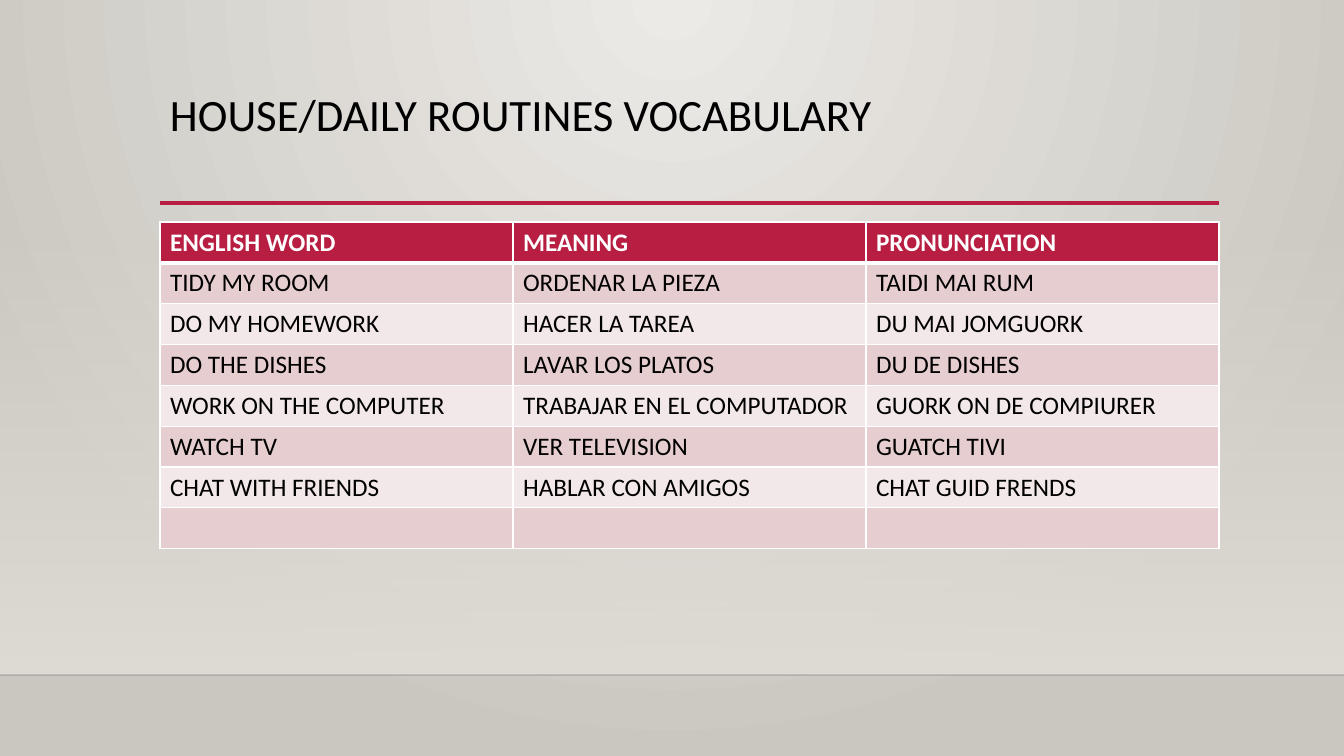
import pptx
import pptx.dml.color
import pptx.enum.shapes
import pptx.enum.text
import pptx.oxml
import pptx.oxml.ns
import pptx.util
from lxml import etree

RGBColor = pptx.dml.color.RGBColor
qn = pptx.oxml.ns.qn

EMU_PER_PX = 914400 / 100.8
FONT = "Calibri"
BLACK = RGBColor(0x00, 0x00, 0x00)
WHITE = RGBColor(0xFF, 0xFF, 0xFF)
CRIMSON = RGBColor(0xB7, 0x1E, 0x42)
ROSE = RGBColor(0xE6, 0xCD, 0xCF)
PALE_ROSE = RGBColor(0xF3, 0xE8, 0xE9)
WALL_LIGHT = RGBColor(0xEC, 0xEA, 0xE7)
WALL_DARK = RGBColor(0xCA, 0xC7, 0xC1)
HAZE = RGBColor(0xDF, 0xDB, 0xD5)
FLOOR_EDGE = RGBColor(0x00, 0x00, 0x01)

VOCABULARY = [
    ("ENGLISH WORD", "MEANING", "PRONUNCIATION"),
    ("TIDY MY ROOM", "ORDENAR LA PIEZA", "TAIDI MAI RUM"),
    ("DO MY HOMEWORK", "HACER LA TAREA", "DU MAI JOMGUORK"),
    ("DO THE DISHES", "LAVAR LOS PLATOS", "DU DE DISHES"),
    ("WORK ON THE COMPUTER", "TRABAJAR EN EL COMPUTADOR", "GUORK ON DE COMPIURER"),
    ("WATCH TV", "VER TELEVISION", "GUATCH TIVI"),
    ("CHAT WITH FRIENDS", "HABLAR CON AMIGOS", "CHAT GUID FRENDS"),
    ("", "", ""),
]


def px(length):
    """Turn a length in px into EMU."""
    return pptx.util.Emu(round(length * EMU_PER_PX))


def write_text(frame, text, size=18, color=BLACK, bold=False, line_spacing=None):
    """Write one formatted paragraph into a text frame."""
    paragraph = frame.paragraphs[0]
    paragraph.line_spacing = line_spacing
    run = paragraph.add_run()
    run.text = text
    run.font.name = FONT
    run.font.size = pptx.util.Pt(size)
    run.font.color.rgb = color
    run.font.bold = bold


def set_alpha(color_element, percent):
    """Make a colour element partly opaque."""
    etree.SubElement(color_element, qn("a:alpha"), val=str(percent * 1000))


def set_gradient(fill, first, last):
    """Give a fill a two-colour gradient."""
    fill.gradient()
    for stop, color, position in zip(fill.gradient_stops, (first, last), (0, 1)):
        stop.color.rgb = color
        stop.position = position


def add_line(slide, left, top, width, color, weight, opacity=100):
    """Draw a horizontal line."""
    line = slide.shapes.add_connector(
        pptx.enum.shapes.MSO_CONNECTOR.STRAIGHT, px(left), px(top), px(left + width), px(top))
    line.line.color.rgb = color
    line.line.width = pptx.util.Pt(weight)
    properties = line.element.spPr
    etree.SubElement(properties, qn("a:effectLst"))
    if opacity < 100:
        set_alpha(properties.find(".//" + qn("a:srgbClr")), opacity)


def add_backdrop(slide, left, top, width, height):
    """Paint the radial wall, the haze over it and the floor edge."""
    fill = slide.background.fill
    set_gradient(fill, WALL_LIGHT, WALL_DARK)
    gradient = slide.element.find(".//" + qn("a:gradFill"))
    gradient.remove(gradient.find(qn("a:lin")))
    radial = etree.SubElement(gradient, qn("a:path"), path="circle")
    etree.SubElement(radial, qn("a:fillToRect"), l="43000", t="0", r="43000", b="100000")

    haze = slide.shapes.add_shape(
        pptx.enum.shapes.MSO_SHAPE.RECTANGLE, px(left), px(top), px(width), px(height))
    haze.shadow.inherit = False
    haze.line.fill.background()
    set_gradient(haze.fill, HAZE, HAZE)
    haze.fill.gradient_angle = 270
    set_alpha(haze.element.spPr.find(".//" + qn("a:srgbClr")), 0)
    add_line(slide, left, top + height, width, FLOOR_EDGE, 1, opacity=20)


def add_title(slide, left, top, width, height, text):
    """Place the title with the rule under it."""
    box = slide.shapes.add_textbox(px(left), px(top), px(width), px(height))
    box.text_frame.word_wrap = True
    box.text_frame.vertical_anchor = pptx.enum.text.MSO_ANCHOR.TOP
    write_text(box.text_frame, text, size=32, line_spacing=0.9)
    add_line(slide, left, top + height, width, CRIMSON, 2.5)


def set_borders(cell, bottom_weight):
    """Outline a cell in white."""
    properties = cell._tc.get_or_add_tcPr()
    weights = {"lnL": 1, "lnR": 1, "lnT": 1, "lnB": bottom_weight}
    for index, (side, weight) in enumerate(weights.items()):
        border = etree.Element(qn("a:" + side), w=str(pptx.util.Pt(weight)))
        fill = etree.SubElement(border, qn("a:solidFill"))
        etree.SubElement(fill, qn("a:srgbClr"), val=str(WHITE))
        properties.insert(index, border)


def add_vocabulary(slide, left, top, width, height, rows):
    """Place the word table with a header and banded rows."""
    table = slide.shapes.add_table(
        len(rows), len(rows[0]), px(left), px(top), px(width), px(height)).table
    for row_index, words in enumerate(rows):
        header = row_index == 0
        band = ROSE if row_index % 2 else PALE_ROSE
        for column_index, word in enumerate(words):
            cell = table.cell(row_index, column_index)
            cell.fill.solid()
            cell.fill.fore_color.rgb = CRIMSON if header else band
            set_borders(cell, 3 if header else 1)
            if word:
                write_text(cell.text_frame, word, color=WHITE if header else BLACK, bold=header)


def main():
    """Build and save the vocabulary slide."""
    presentation = pptx.Presentation()
    presentation.slide_width = px(1344)
    presentation.slide_height = px(756)
    slide = presentation.slides.add_slide(presentation.slide_layouts[6])
    add_backdrop(slide, 0, 223, 1344, 452)
    add_title(slide, 160, 88, 1059, 115, "HOUSE/DAILY ROUTINES VOCABULARY")
    add_vocabulary(slide, 160, 222, 1059, 327, VOCABULARY)
    presentation.save("out.pptx")


if __name__ == "__main__":
    main()
